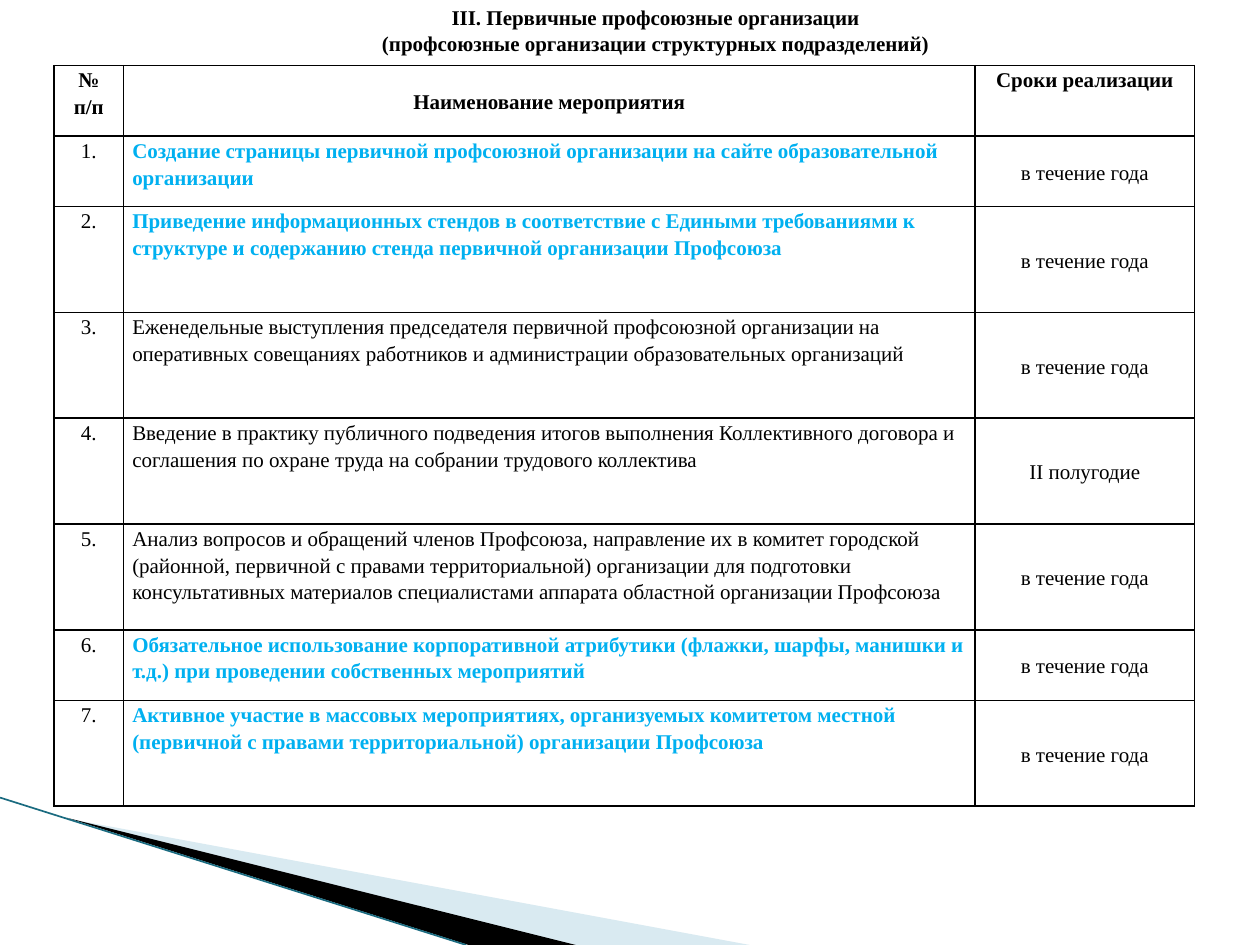
import lxml.etree
import pptx
import pptx.dml.color
import pptx.enum.shapes
import pptx.enum.text
import pptx.oxml.ns
import pptx.util
from pptx.util import Inches

ALIGN = pptx.enum.text.PP_ALIGN
ANCHOR = pptx.enum.text.MSO_ANCHOR
BLACK, ACCENT = "000000", "00B0F0"
qn = pptx.oxml.ns.qn


def rgb(value):
    return pptx.dml.color.RGBColor.from_string(value)


def write(paragraph, text, bold, color=BLACK, align=ALIGN.CENTER):
    paragraph.alignment = align
    run = paragraph.add_run()
    run.text = text
    run.font.name = "Times New Roman"
    run.font.size = pptx.util.Pt(12)
    run.font.bold = bold
    run.font.color.rgb = rgb(color)


prs = pptx.Presentation()
prs.slide_width, prs.slide_height = Inches(10), Inches(7.5)
slide = prs.slides.add_slide(prs.slide_layouts[5])

# Corner decoration: pale wedge, black wedge and a thin line
wedges = [
    ([(0.55, 6.5), (5.95, 7.5), (4.56, 7.5)], "A0CBDC", 40),
    ([(0.53, 6.49), (4.57, 7.5), (3.72, 7.5)], BLACK, 100),
]
for points, color, opacity in wedges:
    corners = [(Inches(x), Inches(y)) for x, y in points]
    builder = slide.shapes.build_freeform(*corners[0], scale=1.0)
    builder.add_line_segments(corners[1:], close=True)
    wedge = builder.convert_to_shape()
    wedge.shadow.inherit = False
    wedge.line.fill.background()
    wedge.fill.solid()
    wedge.fill.fore_color.rgb = rgb(color)
    if opacity < 100:
        tint = wedge.fill._xPr.find(".//" + qn("a:srgbClr"))
        lxml.etree.SubElement(tint, qn("a:alpha"), val=str(opacity * 1000))

edge = slide.shapes.add_connector(
    pptx.enum.shapes.MSO_CONNECTOR.STRAIGHT,
    Inches(0), Inches(6.33), Inches(3.7), Inches(7.5))
edge.line.color.rgb = rgb("1A6B80")
edge.line.width = pptx.util.Pt(0.95)
lxml.etree.SubElement(edge._element.spPr, qn("a:effectLst"))

# Heading
heading = slide.shapes.title
heading.left, heading.top = Inches(1.55), Inches(0.03)
heading.width, heading.height = Inches(7.31), Inches(0.42)
frame = heading.text_frame
frame.word_wrap = True
frame.auto_size = pptx.enum.text.MSO_AUTO_SIZE.NONE
frame.vertical_anchor = ANCHOR.MIDDLE
frame.margin_top = frame.margin_bottom = 0
write(frame.paragraphs[0], "III. Первичные профсоюзные организации", True)
write(frame.add_paragraph(),
      "(профсоюзные организации структурных подразделений)", True)

# Plan of activities: name, term, highlighted, row height
YEAR = "в течение года"
activities = [
    ("Создание страницы первичной профсоюзной организации на сайте "
     "образовательной организации", YEAR, True, 0.56),
    ("Приведение информационных стендов в соответствие с Едиными требованиями "
     "к структуре и содержанию стенда первичной организации Профсоюза",
     YEAR, True, 0.84),
    ("Еженедельные выступления председателя первичной профсоюзной организации "
     "на оперативных совещаниях работников и администрации образовательных "
     "организаций", YEAR, False, 0.84),
    ("Введение в практику публичного подведения итогов выполнения "
     "Коллективного договора и соглашения по охране труда на собрании "
     "трудового коллектива", "II полугодие", False, 0.84),
    ("Анализ вопросов и обращений членов Профсоюза, направление их в комитет "
     "городской (районной, первичной с правами территориальной) организации "
     "для подготовки консультативных материалов специалистами аппарата "
     "областной организации Профсоюза", YEAR, False, 0.84),
    ("Обязательное использование корпоративной атрибутики (флажки, шарфы, "
     "манишки и т.д.) при проведении собственных мероприятий",
     YEAR, True, 0.56),
    ("Активное участие в массовых мероприятиях, организуемых комитетом местной "
     "(первичной с правами территориальной) организации Профсоюза",
     YEAR, True, 0.84),
]
header = ("№ п/п", "Наименование мероприятия", "Сроки реализации")
rows = [header] + [(f"{number}.", name, term)
                   for number, (name, term, _, _) in enumerate(activities, 1)]
highlights = [False] + [activity[2] for activity in activities]
heights = [0.56] + [activity[3] for activity in activities]
widths = [0.55, 6.76, 1.74]

plan = slide.shapes.add_table(
    len(rows), len(widths), Inches(0.43), Inches(0.52),
    Inches(sum(widths)), Inches(sum(heights))).table
for column, width in zip(plan.columns, widths):
    column.width = Inches(width)
for row, height in zip(plan.rows, heights):
    row.height = Inches(height)

for r, texts in enumerate(rows):
    for c, text in enumerate(texts):
        cell = plan.cell(r, c)
        cell.margin_left = cell.margin_right = Inches(0.07)
        cell.margin_top = cell.margin_bottom = 0
        is_name = r > 0 and c == 1
        if (r == 0 and c == 1) or (r > 0 and c == 2):
            cell.vertical_anchor = ANCHOR.MIDDLE
        highlighted = is_name and highlights[r]
        paragraph = cell.text_frame.paragraphs[0]
        paragraph.line_spacing = 1.15
        write(paragraph, text, r == 0 or highlighted,
              ACCENT if highlighted else BLACK,
              ALIGN.LEFT if is_name else ALIGN.CENTER)
        properties = cell._tc.get_or_add_tcPr()
        for side in ("a:lnL", "a:lnR", "a:lnT", "a:lnB"):
            border = lxml.etree.SubElement(
                properties, qn(side), w=str(pptx.util.Pt(1)))
            solid = lxml.etree.SubElement(border, qn("a:solidFill"))
            lxml.etree.SubElement(solid, qn("a:srgbClr"), val=BLACK)
        cell.fill.background()

prs.save("out.pptx")
